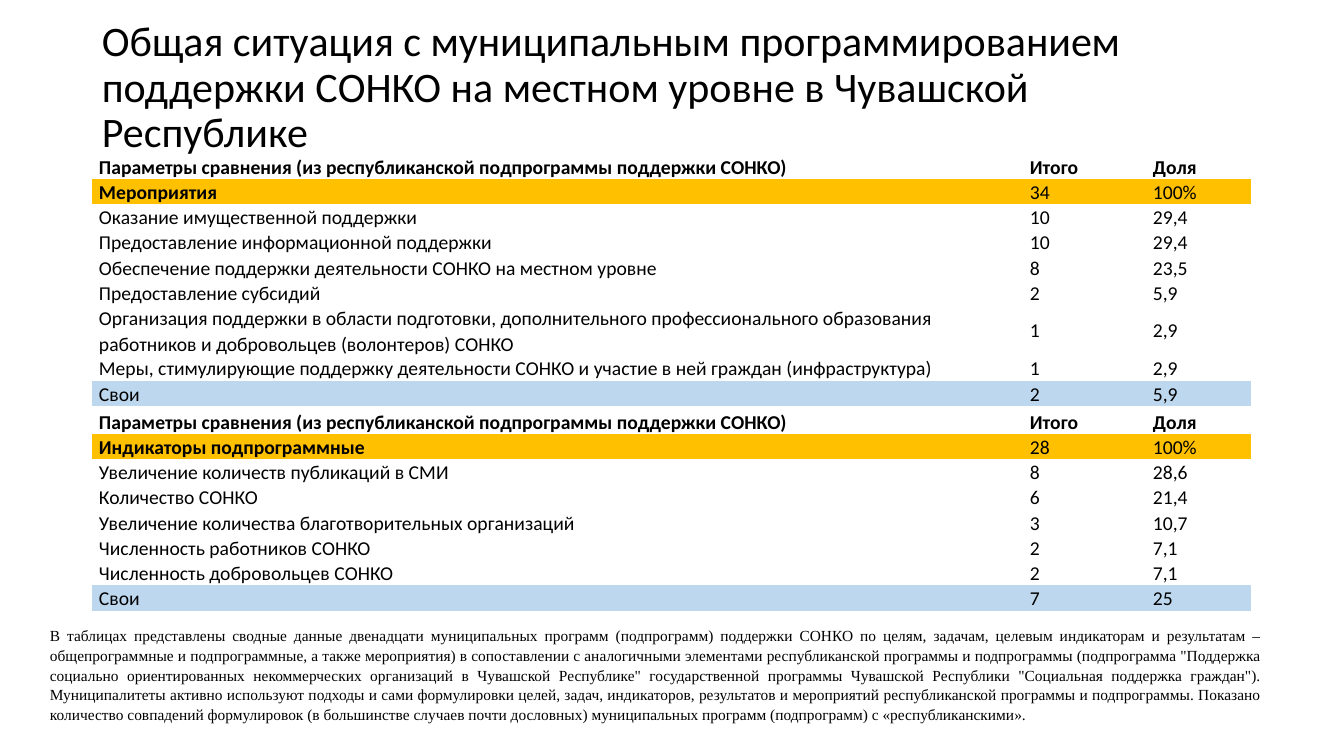
"""Build a slide comparing municipal programmes that support non-profits."""
from dataclasses import dataclass

from pptx import Presentation
from pptx.dml.color import RGBColor
from pptx.enum.text import MSO_ANCHOR, MSO_AUTO_SIZE, PP_ALIGN
from pptx.oxml.ns import qn
from pptx.util import Emu, Pt


@dataclass(frozen=True)
class Theme:
    text: str = "000000"
    total_fill: str = "FFC000"
    own_fill: str = "BDD7EE"
    main_font: str = "Calibri"
    note_font: str = "Times New Roman"
    title_size: int = 30
    table_size: int = 14
    note_size: int = 11
    plain_table: str = "{2D5ABB26-0587-4C30-8999-92F81FD0307C}"


theme = Theme()


def px(length):
    return Emu(round(length * 914400 / 100.8))


def write(frame, text, size, font=theme.main_font, bold=False, spacing=1.07,
          after=0, align=PP_ALIGN.LEFT):
    frame.word_wrap = True
    paragraph = frame.paragraphs[0]
    paragraph.alignment = align
    paragraph.line_spacing = spacing
    paragraph.space_after = Pt(after)
    run = paragraph.add_run()
    run.text = text
    run.font.name = font
    run.font.size = Pt(size)
    run.font.bold = bold
    run.font.color.rgb = RGBColor.from_string(theme.text)


presentation = Presentation()
presentation.slide_width, presentation.slide_height = px(1344), px(756)
slide = presentation.slides.add_slide(presentation.slide_layouts[6])

title = slide.shapes.add_textbox(px(92), px(40), px(1159), px(97)).text_frame
title.vertical_anchor = MSO_ANCHOR.MIDDLE
write(title, "Общая ситуация с муниципальным программированием поддержки СОНКО "
      "на местном уровне в Чувашской Республике", theme.title_size, spacing=0.9)

header = ("Параметры сравнения (из республиканской подпрограммы поддержки СОНКО)",
          "Итого", "Доля")
activities = [
    header,
    ("Мероприятия", "34", "100%"),
    ("Оказание имущественной поддержки", "10", "29,4"),
    ("Предоставление информационной поддержки", "10", "29,4"),
    ("Обеспечение поддержки деятельности СОНКО на местном уровне", "8", "23,5"),
    ("Предоставление субсидий", "2", "5,9"),
    ("Организация поддержки в области подготовки, дополнительного профессионального "
     "образования работников и добровольцев (волонтеров) СОНКО", "1", "2,9"),
    ("Меры, стимулирующие поддержку деятельности СОНКО и участие в ней граждан "
     "(инфраструктура)", "1", "2,9"),
    ("Свои", "2", "5,9"),
]
indicators = [
    header,
    ("Индикаторы подпрограммные", "28", "100%"),
    ("Увеличение количеств публикаций в СМИ", "8", "28,6"),
    ("Количество СОНКО", "6", "21,4"),
    ("Увеличение количества благотворительных организаций", "3", "10,7"),
    ("Численность работников СОНКО", "2", "7,1"),
    ("Численность добровольцев СОНКО", "2", "7,1"),
    ("Свои", "7", "25"),
]
column_widths = (931, 123, 105)
row_height = 20

for top, rows in ((154, activities), (409, indicators)):
    table_frame = slide.shapes.add_table(
        len(rows), len(column_widths), px(92), px(top),
        px(sum(column_widths)), px(row_height * len(rows)))
    next(table_frame.element.iter(qn("a:tableStyleId"))).text = theme.plain_table
    table = table_frame.table
    table.first_row = table.horz_banding = False
    for column, width in zip(table.columns, column_widths):
        column.width = px(width)
    row_fills = {1: theme.total_fill, len(rows) - 1: theme.own_fill}
    for row_index, row in enumerate(rows):
        for column_index, text in enumerate(row):
            cell = table.cell(row_index, column_index)
            cell.margin_left = cell.margin_right = px(7)
            cell.margin_top = cell.margin_bottom = 0
            is_label = row_index > 0 and column_index == 0
            cell.vertical_anchor = MSO_ANCHOR.BOTTOM if is_label else MSO_ANCHOR.MIDDLE
            if row_index in row_fills:
                cell.fill.solid()
                cell.fill.fore_color.rgb = RGBColor.from_string(row_fills[row_index])
            else:
                cell.fill.background()
            bold = row_index == 0 or (row_index == 1 and column_index == 0)
            write(cell.text_frame, text, theme.table_size, bold=bold, after=8)

note = slide.shapes.add_textbox(px(40), px(620), px(1232), px(109)).text_frame
note.auto_size = MSO_AUTO_SIZE.SHAPE_TO_FIT_TEXT
write(note, "В таблицах представлены сводные данные двенадцати муниципальных программ "
      "(подпрограмм) поддержки СОНКО по целям, задачам, целевым индикаторам и "
      "результатам – общепрограммные и подпрограммные, а также мероприятия) в "
      "сопоставлении с аналогичными элементами республиканской программы и подпрограммы "
      '(подпрограмма "Поддержка социально ориентированных некоммерческих организаций в '
      'Чувашской Республике" государственной программы Чувашской Республики "Социальная '
      'поддержка граждан"). Муниципалитеты активно используют подходы и сами '
      "формулировки целей, задач, индикаторов, результатов и мероприятий республиканской "
      "программы и подпрограммы. Показано количество совпадений формулировок (в "
      "большинстве случаев почти дословных) муниципальных программ (подпрограмм) с "
      "«республиканскими».",
      theme.note_size, font=theme.note_font, after=6, align=PP_ALIGN.JUSTIFY)

presentation.save("out.pptx")
